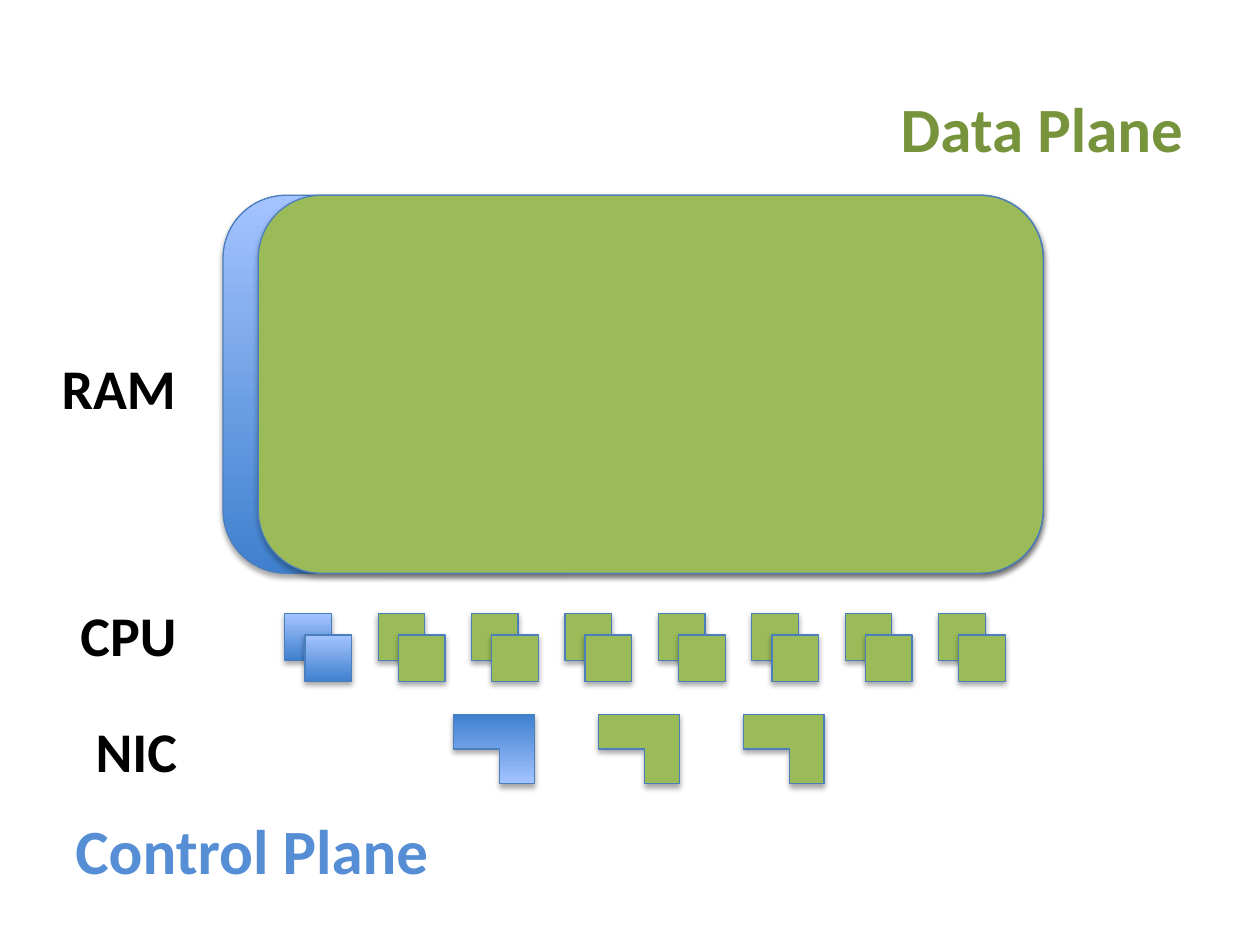
from pptx import Presentation
from pptx.dml.color import RGBColor
from pptx.enum.shapes import MSO_SHAPE
from pptx.enum.text import MSO_AUTO_SIZE
from pptx.util import Inches, Pt

BLUE_DARK = RGBColor(0x3F, 0x80, 0xCE)
BLUE_LIGHT = RGBColor(0xA4, 0xC4, 0xFF)
GREEN = RGBColor(0x9B, 0xBB, 0x59)
OUTLINE = RGBColor(0x4B, 0x7E, 0xBC)
CONTROL_TEXT = RGBColor(0x55, 0x8E, 0xD5)
DATA_TEXT = RGBColor(0x77, 0x93, 0x3C)
BLACK = RGBColor(0, 0, 0)

CPU_COUNT, CPU_PITCH, CPU_SIZE = 8, 5.19 / 7, 0.37
NIC_COUNT, NIC_PITCH = 3, 1.15


def add_block(shapes, kind, left, top, width, height, control, rotation=0):
    """Add a resource block: blue gradient for control plane, green for data plane.

    The soft shadow comes from the theme.
    """
    sp = shapes.add_shape(kind, Inches(left), Inches(top), Inches(width), Inches(height))
    sp.rotation = rotation
    sp.line.color.rgb = OUTLINE
    sp.line.width = Pt(0.75)
    if control:
        sp.fill.gradient()
        sp.fill.gradient_angle = 90
        for stop, color in zip(sp.fill.gradient_stops, (BLUE_DARK, BLUE_LIGHT)):
            stop.color.rgb = color
    else:
        sp.fill.solid()
        sp.fill.fore_color.rgb = GREEN


def add_row(shapes, kind, count, pitch, left, top, width, height, rotation=0):
    """Add a grouped row of blocks, the first of which is for the control plane."""
    group = shapes.add_group_shape()
    for i in range(count):
        add_block(group.shapes, kind, left + i * pitch, top, width, height,
                  control=i == 0, rotation=rotation)


def add_label(shapes, text, left, top, width, height, size, color):
    box = shapes.add_textbox(Inches(left), Inches(top), Inches(width), Inches(height))
    tf = box.text_frame
    tf.word_wrap = False
    tf.auto_size = MSO_AUTO_SIZE.SHAPE_TO_FIT_TEXT
    p = tf.paragraphs[0]
    p.text = text
    p.font.name = "Calibri"
    p.font.size = Pt(size)
    p.font.bold = True
    p.font.color.rgb = color


def main():
    prs = Presentation()
    prs.slide_width, prs.slide_height = Inches(10), Inches(7.5)
    shapes = prs.slides.add_slide(prs.slide_layouts[6]).shapes

    add_row(shapes, MSO_SHAPE.CORNER, NIC_COUNT, NIC_PITCH,
            3.6, 5.67, 0.64, 0.55, rotation=180)
    for left, top in ((2.26, 4.87), (2.42, 5.04)):
        add_row(shapes, MSO_SHAPE.RECTANGLE, CPU_COUNT, CPU_PITCH,
                left, top, CPU_SIZE, CPU_SIZE)

    ram_right = 8.28
    for left, control in ((1.77, True), (2.05, False)):
        add_block(shapes, MSO_SHAPE.ROUNDED_RECTANGLE, left, 1.55,
                  ram_right - left, 3, control)

    add_label(shapes, "Control Plane", 0.5, 6.39, 3.04, 0.71, 36, CONTROL_TEXT)
    add_label(shapes, "Data Plane", 7.05, 0.66, 2.47, 0.71, 36, DATA_TEXT)
    label_right = 1.51
    for text, top, width in (("RAM", 2.76, 1.12), ("CPU", 4.72, 0.97), ("NIC", 5.64, 0.85)):
        add_label(shapes, text, label_right - width, top, width, 0.64, 32, BLACK)

    prs.save("out.pptx")


if __name__ == "__main__":
    main()
